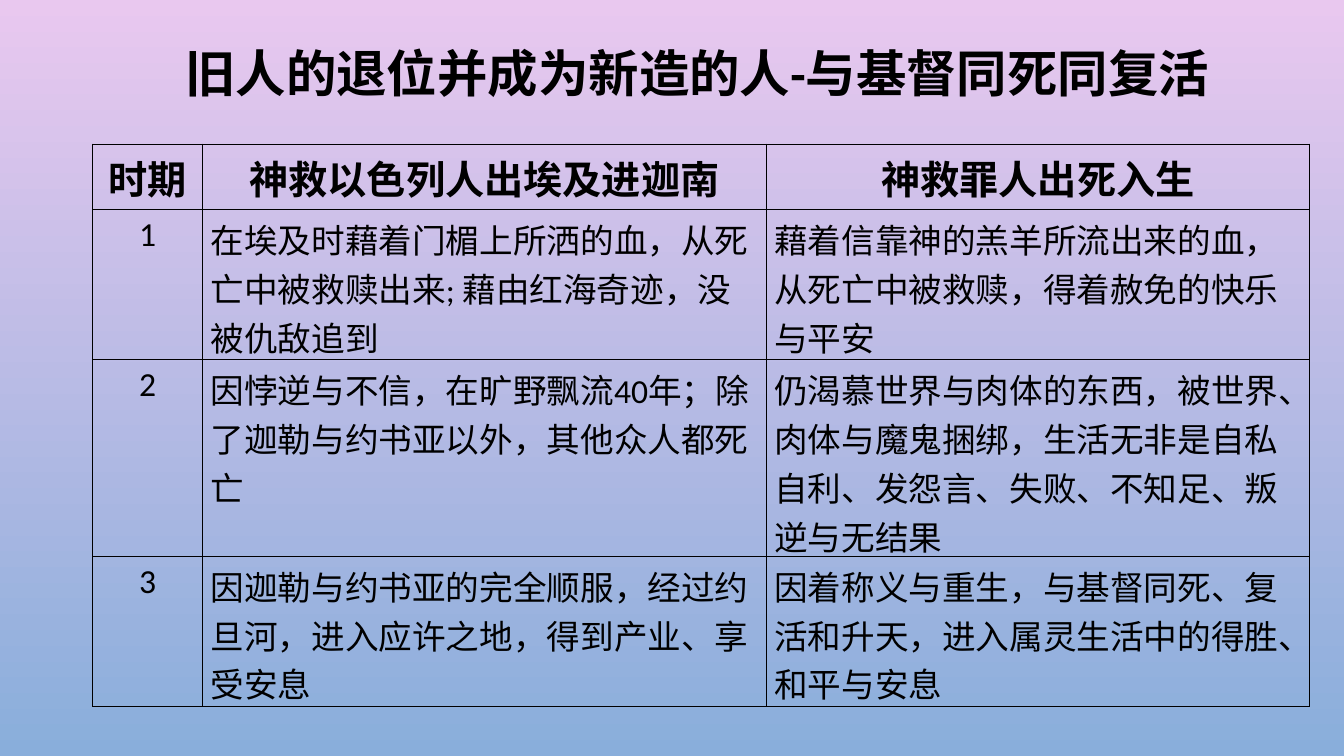
from pptx import Presentation
from pptx.dml.color import RGBColor
from pptx.enum.lang import MSO_LANGUAGE_ID
from pptx.enum.text import MSO_ANCHOR, PP_ALIGN
from pptx.oxml import parse_xml
from pptx.oxml.ns import nsdecls
from pptx.util import Inches, Pt

COLORS = {"top": "E9C8EF", "bottom": "89AEDB", "ink": "000000"}

TITLE = "旧人的退位并成为新造的人-与基督同死同复活"
COLUMN_WIDTHS = [1.09, 5.59, 5.39]
ROW_HEIGHTS = [0.65, 1.49, 1.95, 1.49]
ROWS = [
    ["时期", "神救以色列人出埃及进迦南", "神救罪人出死入生"],
    ["1", "在埃及时藉着门楣上所洒的血，从死亡中被救赎出来; 藉由红海奇迹，没被仇敌追到",
     "藉着信靠神的羔羊所流出来的血，从死亡中被救赎，得着赦免的快乐与平安"],
    ["2", "因悖逆与不信，在旷野飘流40年；除了迦勒与约书亚以外，其他众人都死亡",
     "仍渴慕世界与肉体的东西，被世界、肉体与魔鬼捆绑，生活无非是自私自利、发怨言、失败、不知足、叛逆与无结果"],
    ["3", "因迦勒与约书亚的完全顺服，经过约旦河，进入应许之地，得到产业、享受安息",
     "因着称义与重生，与基督同死、复活和升天，进入属灵生活中的得胜、和平与安息"],
]


class SlideBuilder:
    font_name = "Calibri"
    title_size, header_size, body_size = 36, 28, 24
    border_width = 1

    def __init__(self, slide):
        self.slide = slide

    def background(self):
        fill = self.slide.background.fill
        fill.gradient()
        fill.gradient_angle = 270
        for stop, name in zip(fill.gradient_stops, ("top", "bottom")):
            stop.color.rgb = RGBColor.from_string(COLORS[name])

    def style_text(self, text_frame, text, size, bold, alignment):
        text_frame.word_wrap = True
        text_frame.text = text
        paragraph = text_frame.paragraphs[0]
        paragraph.alignment = alignment
        for run in paragraph.runs:
            run.font.name = self.font_name
            run.font.size = Pt(size)
            run.font.bold = bold
            run.font.color.rgb = RGBColor.from_string(COLORS["ink"])
            run.font.language_id = MSO_LANGUAGE_ID.SIMPLIFIED_CHINESE
        return paragraph

    def title(self, text, left, top, width, height):
        box = self.slide.shapes.add_textbox(
            Inches(left), Inches(top), Inches(width), Inches(height))
        box.text_frame.vertical_anchor = MSO_ANCHOR.MIDDLE
        paragraph = self.style_text(
            box.text_frame, text, self.title_size, True, PP_ALIGN.CENTER)
        paragraph.line_spacing = 0.9

    def borders(self, cell):
        properties = cell._tc.get_or_add_tcPr()
        for index, side in enumerate(("lnL", "lnR", "lnT", "lnB")):
            properties.insert(index, parse_xml(
                f'<a:{side} {nsdecls("a")} w="{Pt(self.border_width)}">'
                f'<a:solidFill><a:srgbClr val="{COLORS["ink"]}"/></a:solidFill>'
                f'</a:{side}>'))

    def table(self, rows, left, top, widths, heights):
        table = self.slide.shapes.add_table(
            len(rows), len(widths), Inches(left), Inches(top),
            Inches(sum(widths)), Inches(sum(heights))).table
        table.horz_banding = False
        for column, width in zip(table.columns, widths):
            column.width = Inches(width)
        for row, height in zip(table.rows, heights):
            row.height = Inches(height)
        for row_index, texts in enumerate(rows):
            header = row_index == 0
            size = self.header_size if header else self.body_size
            for column_index, text in enumerate(texts):
                cell = table.cell(row_index, column_index)
                cell.margin_left = cell.margin_right = Inches(0.08)
                cell.fill.background()
                centred = header or column_index == 0
                self.style_text(cell.text_frame, text, size, header,
                                PP_ALIGN.CENTER if centred else PP_ALIGN.LEFT)
                self.borders(cell)


def main():
    presentation = Presentation()
    presentation.slide_width = Inches(13.33)
    presentation.slide_height = Inches(7.5)
    slide = presentation.slides.add_slide(presentation.slide_layouts[6])
    builder = SlideBuilder(slide)
    builder.background()
    builder.title(TITLE, 1.25, 0.08, 11.33, 1.35)
    builder.table(ROWS, 0.92, 1.43, COLUMN_WIDTHS, ROW_HEIGHTS)
    presentation.save("out.pptx")


if __name__ == "__main__":
    main()
